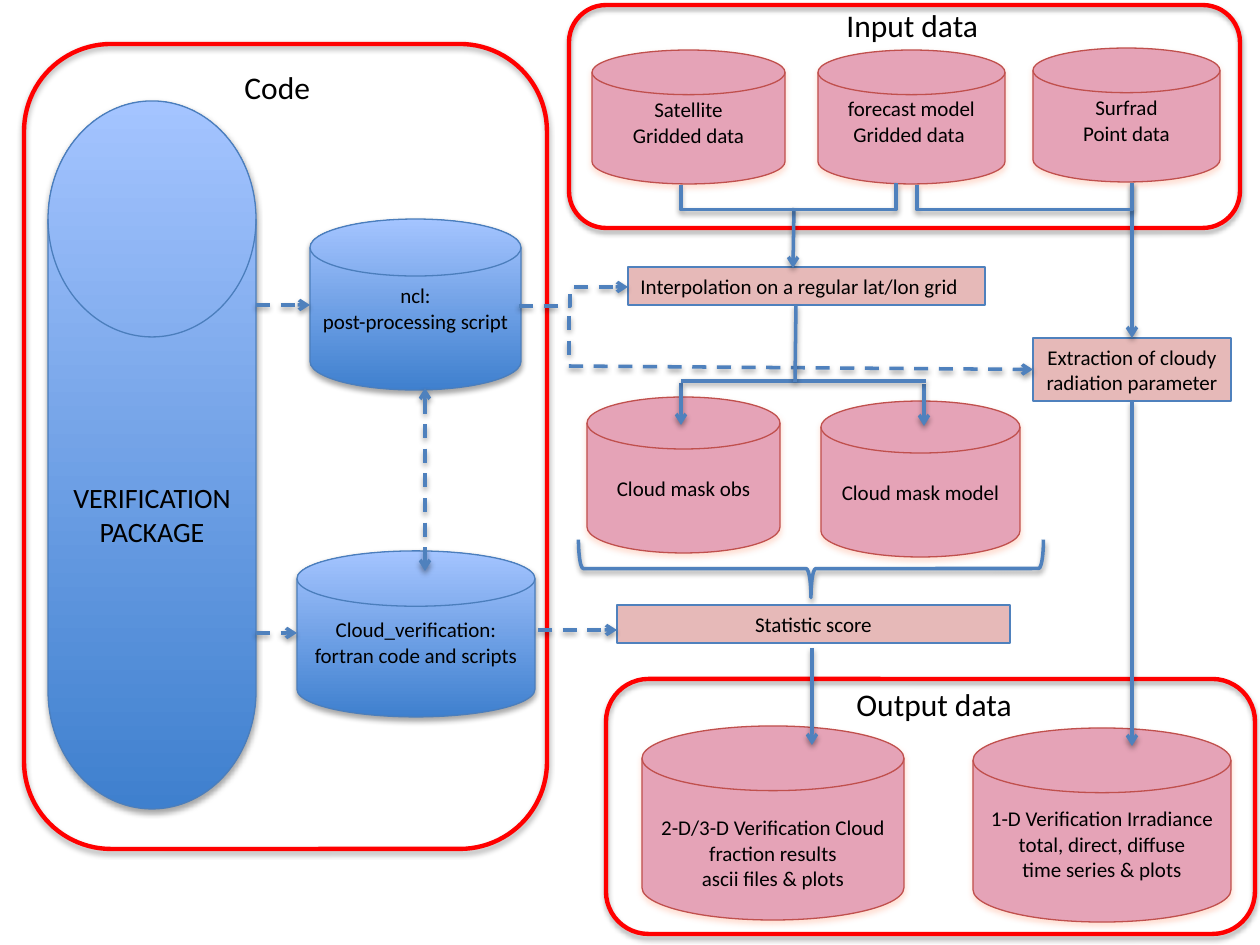
"""Draw the data flow of a cloud verification package."""
from dataclasses import dataclass
from typing import Optional

from lxml import etree
from pptx import Presentation
from pptx.dml.color import RGBColor
from pptx.enum.dml import MSO_LINE
from pptx.enum.shapes import MSO_CONNECTOR, MSO_SHAPE
from pptx.enum.text import MSO_ANCHOR, PP_ALIGN
from pptx.oxml.ns import qn
from pptx.util import Pt

PX = 914400 / 126
DISK, RECT = MSO_SHAPE.FLOWCHART_MAGNETIC_DISK, MSO_SHAPE.RECTANGLE
ROUND, BRACE = MSO_SHAPE.ROUNDED_RECTANGLE, MSO_SHAPE.LEFT_BRACE
STRAIGHT, ELBOW = MSO_CONNECTOR.STRAIGHT, MSO_CONNECTOR.ELBOW
DASH = MSO_LINE.DASH
TOP = MSO_ANCHOR.TOP
LEFT, CENTER = PP_ALIGN.LEFT, PP_ALIGN.CENTER
BLACK = RGBColor(0x00, 0x00, 0x00)
RED = RGBColor(0xFF, 0x00, 0x00)
BLUE = RGBColor(0x4F, 0x81, 0xBD)
DISK_BLUE = RGBColor(0x4B, 0x7E, 0xBC)
DEEP_BLUE = RGBColor(0x3F, 0x80, 0xCE)
PALE_BLUE = RGBColor(0xA4, 0xC4, 0xFF)
PINK = RGBColor(0xE5, 0xA3, 0xB7)
BRICK = RGBColor(0xC0, 0x50, 0x4D)
ROSE = RGBColor(0xE6, 0xB9, 0xB8)
GLOW = RGBColor(0xFF, 0xA7, 0x87)


@dataclass
class Disk:
    """A cylinder; text_y is the top of its text."""
    x: int
    y: int
    w: int
    h: int
    text: str
    text_y: int
    code: bool = False
    size: int = 12


@dataclass
class Step:
    """A processing step in a rectangle."""
    x: int
    y: int
    w: int
    h: int
    text: str
    align: PP_ALIGN = CENTER


@dataclass
class Flow:
    """A straight line, optionally joined to a step at (name, side)."""
    x1: int
    y1: int
    x2: int
    y2: int
    dashed: bool = False
    head: bool = False
    tail: bool = True
    begin: Optional[tuple] = None
    end: Optional[tuple] = None


DISKS = [
    Disk(48, 101, 208, 708, "VERIFICATION PACKAGE", 481, True, 16),
    Disk(310, 219, 211, 171, "ncl:\vpost-processing script", 283, True),
    Disk(297, 551, 238, 166, "Cloud_verification:\vfortran code and scripts", 617, True),
    Disk(592, 50, 193, 134, "Satellite\nGridded data", 97),
    Disk(818, 50, 187, 134, "forecast model\nGridded data ", 96),
    Disk(821, 401, 199, 156, "Cloud mask model", 480),
    Disk(973, 728, 258, 194,
         "1-D Verification Irradiance total, direct, diffuse\vtime series & plots", 806),
    Disk(587, 397, 193, 156, "Cloud mask obs", 476),
    Disk(1033, 48, 187, 134, "Surfrad\nPoint data", 95),
    Disk(642, 726, 262, 194,
         "2-D/3-D Verification Cloud fraction results\vascii files & plots", 815),
]
STEPS = {
    "interpolation": Step(628, 267, 357, 38, "Interpolation on a regular lat/lon grid", LEFT),
    "score": Step(617, 605, 393, 38, "Statistic score"),
    "extraction": Step(1033, 338, 198, 63, "Extraction of cloudy radiation parameter "),
}
FRAMES = [(569, 5, 671, 223), (606, 679, 649, 255), (24, 44, 523, 805)]
HEADINGS = [(834, 0, 159, "Input data"), (844, 679, 183, "Output data"), (232, 62, 92, "Code")]
FLOWS = [
    Flow(256, 305, 310, 305, dashed=True),
    Flow(256, 633, 297, 633, dashed=True),
    Flow(569, 366, 1033, 369, dashed=True, end=("extraction", 1)),
    Flow(569, 316, 569, 359, dashed=True, tail=False),
    Flow(538, 630, 617, 630, dashed=True),
    Flow(425, 388, 425, 571, dashed=True, head=True),
    Flow(794, 208, 793, 268),
    Flow(1132, 183, 1132, 338, end=("extraction", 0)),
    Flow(1132, 401, 1132, 746, begin=("extraction", 2)),
    Flow(812, 648, 812, 745),
    Flow(681, 383, 681, 425),
    Flow(924, 384, 924, 426),
    Flow(681, 381, 926, 381, tail=False),
    Flow(796, 305, 795, 382, tail=False),
]
BRACKETS = [(681, 896), (917, 1132)]


def emu(*px):
    """Turn px lengths into EMU."""
    return [round(v * PX) for v in px]


def add_shadow(sp, color=BLACK, alpha=35, dist=23000):
    """Give a shape or connector a soft shadow below."""
    sp_pr = sp._element.spPr
    effects = sp_pr.find(qn("a:effectLst"))
    if effects is None:
        effects = etree.SubElement(sp_pr, qn("a:effectLst"))
    shadow = etree.SubElement(effects, qn("a:outerShdw"), blurRad="40000", dist=str(dist),
                              dir="5400000", rotWithShape="0")
    tint = etree.SubElement(shadow, qn("a:srgbClr"), val=str(color))
    etree.SubElement(tint, qn("a:alpha"), val=str(alpha * 1000))


def add_outline(s, kind, box, color, width):
    """Add an unfilled, unshadowed preset shape."""
    sp = s.shapes.add_shape(kind, *emu(*box))
    sp.shadow.inherit = False
    sp.fill.background()
    sp.line.color.rgb = color
    sp.line.width = Pt(width)
    return sp


def write(sp, text, size=12, align=CENTER, **frame):
    """Put formatted text in a shape."""
    tf = sp.text_frame
    for name, value in {"word_wrap": True, "vertical_anchor": TOP, **frame}.items():
        setattr(tf, name, value)
    tf.text = text
    for p in tf.paragraphs:
        p.alignment = align
        for r in p.runs:
            for name, value in {"name": "Calibri", "size": Pt(size)}.items():
                setattr(r.font, name, value)
            r.font.color.rgb = BLACK


def draw_disk(s, d: Disk):
    """Draw a cylinder with its text below the lid."""
    sp = add_outline(s, DISK, (d.x, d.y, d.w, d.h), DISK_BLUE if d.code else BRICK, 0.75)
    if d.code:
        sp.fill.gradient()
        sp.fill.gradient_angle = 90
        for stop, color in zip(sp.fill.gradient_stops, (DEEP_BLUE, PALE_BLUE)):
            stop.color.rgb = color
    else:
        sp.fill.solid()
        sp.fill.fore_color.rgb = PINK
    add_shadow(sp, BLACK if d.code else GLOW)
    inset = emu(d.text_y - d.y - d.h / 3)[0]
    write(sp, d.text, d.size, margin_top=inset, margin_bottom=0)


def draw_step(s, step: Step):
    """Draw a processing step and return its shape."""
    sp = add_outline(s, RECT, (step.x, step.y, step.w, step.h), BLUE, 0.75)
    sp.fill.solid()
    sp.fill.fore_color.rgb = ROSE
    write(sp, step.text, align=step.align)
    return sp


def add_line(s, kind, ends, dashed=False, head=False, tail=False):
    """Add a shadowed connector with optional arrowheads."""
    sp = s.shapes.add_connector(kind, *emu(*ends))
    sp.line.color.rgb = BLUE
    sp.line.width = Pt(2)
    if dashed:
        sp.line.dash_style = DASH
    ln = sp._element.spPr.find(qn("a:ln"))
    for tag, wanted in (("a:headEnd", head), ("a:tailEnd", tail)):
        if wanted:
            etree.SubElement(ln, qn(tag), type="arrow")
    add_shadow(sp, alpha=38, dist=20000)
    return sp


def set_bend(sp, ratio: float):
    """Place the bend of an elbow connector."""
    guides = sp._element.spPr.find(qn("a:prstGeom")).get_or_add_avLst()
    etree.SubElement(guides, qn("a:gd"), name="adj1", fmla=f"val {round(ratio * 100000)}")


def draw_flow(s, f: Flow, steps: dict):
    """Draw a straight flow line and join it to its steps."""
    sp = add_line(s, STRAIGHT, (f.x1, f.y1, f.x2, f.y2), f.dashed, f.head, f.tail)
    for joint, connect in ((f.begin, sp.begin_connect), (f.end, sp.end_connect)):
        if joint:
            connect(steps[joint[0]], joint[1])


def draw_bracket(s, left: int, right: int, top: int = 184, drop: int = 25):
    """Draw a U-shaped connector, a quarter turn of a narrow elbow."""
    x, half = (left + right) / 2, (right - left) / 2
    sp = add_line(s, ELBOW, (x + 1, top + half, x - 1, top - half))
    sp._element.spPr.find(qn("a:xfrm")).set("rot", "5400000")
    set_bend(sp, -drop / 2)


def main():
    """Build and save the slide."""
    prs = Presentation()
    prs.slide_width, prs.slide_height = emu(1260, 945)
    s = prs.slides.add_slide(prs.slide_layouts[6])
    for disk in DISKS:
        draw_disk(s, disk)
    brace = add_outline(s, BRACE, (782, 336, 58, 465), BLUE, 2)
    brace.rotation = 270
    add_shadow(brace, alpha=38, dist=20000)
    steps = {name: draw_step(s, step) for name, step in STEPS.items()}
    for frame in FRAMES:
        add_shadow(add_outline(s, ROUND, frame, RED, 2.5))
    set_bend(add_line(s, ELBOW, (519, 306, 628, 287), dashed=True, tail=True), 0.47)
    for flow in FLOWS:
        draw_flow(s, flow, steps)
    for left, right in BRACKETS:
        draw_bracket(s, left, right)
    for x, y, w, text in HEADINGS:
        write(s.shapes.add_textbox(*emu(x, y, w, 50)), text, 18, LEFT, word_wrap=False)
    prs.save("out.pptx")


if __name__ == "__main__":
    main()
